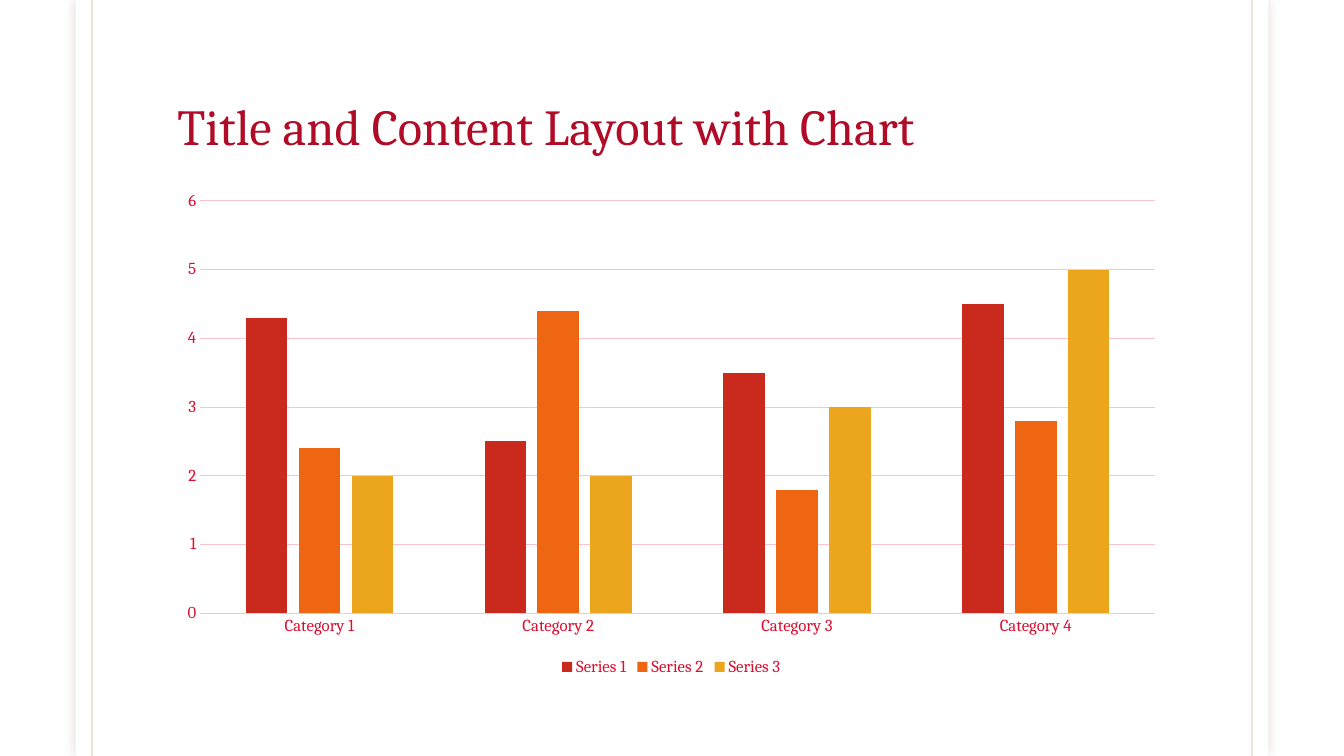
from lxml import etree
from pptx import Presentation
from pptx.chart.data import CategoryChartData
from pptx.dml.color import RGBColor
from pptx.enum.chart import XL_CHART_TYPE as Chart, XL_LEGEND_POSITION as Legend, XL_TICK_MARK as Tick
from pptx.enum.shapes import MSO_CONNECTOR as Conn, MSO_SHAPE as Shape
from pptx.enum.text import MSO_ANCHOR as Anchor, MSO_AUTO_SIZE as AutoSize, PP_ALIGN as Align
from pptx.oxml.ns import qn
from pptx.util import Pt

TITLE = "Title and Content Layout with Chart"
CATEGORIES = ["Category 1", "Category 2", "Category 3", "Category 4"]
SERIES = [
    ("Series 1", (4.3, 2.5, 3.5, 4.5), "red"),
    ("Series 2", (2.4, 4.4, 1.8, 2.8), "orange"),
    ("Series 3", (2, 2, 3, 5), "gold"),
]

COLORS = {
    "white": "FFFFFF", "title": "B10C27", "label": "DA0E30", "chart": "4D0511",
    "grid": "FBC3CC", "rule": "79540B", "shadow": "65150F",
    "red": "CA2A1E", "orange": "EE6612", "gold": "EBA61D",
}
FONT = "Cambria"
WIDTH, HEIGHT = 960, 540
PAPER_MARGIN, RULE_INSET = 54, 11.75
CONTENT_LEFT, CONTENT_WIDTH = 119.5, 720
TITLE_TOP, TITLE_HEIGHT = 25.2, 90
CHART_TOP, CHART_HEIGHT = 129.6, 356.4
OPACITY = "15000"


def rgb(name):
    return RGBColor.from_string(COLORS[name])


def set_font(font, size, color):
    font.name = FONT
    font.size = Pt(size)
    font.color.rgb = rgb(color)


def set_line(line, color, width):
    line.color.rgb = rgb(color)
    line.width = Pt(width)


def write_text(tf, text, size=12, color="label", spacing=1.0, anchor=Anchor.TOP):
    tf.word_wrap = True
    tf.auto_size = AutoSize.NONE
    tf.vertical_anchor = anchor
    p = tf.paragraphs[0]
    p.alignment = Align.LEFT
    p.line_spacing = spacing
    r = p.add_run()
    r.text = text
    set_font(r.font, size, color)


def make_translucent(clr):
    etree.SubElement(clr, qn("a:alpha")).set("val", OPACITY)


def add_paper(slide):
    sp = slide.shapes.add_shape(
        Shape.RECTANGLE, Pt(PAPER_MARGIN), 0, Pt(WIDTH - 2 * PAPER_MARGIN), Pt(HEIGHT))
    sp.shadow.inherit = False
    sp.fill.solid()
    sp.fill.fore_color.rgb = rgb("white")
    sp.line.fill.background()
    effects = sp.element.spPr.find(qn("a:effectLst"))
    glow = etree.SubElement(effects, qn("a:outerShdw"), blurRad=str(Pt(7)), dist="0",
                            dir="0", algn="ctr", rotWithShape="0")
    make_translucent(etree.SubElement(glow, qn("a:srgbClr"), val=COLORS["shadow"]))


def add_rule(slide, x):
    rule = slide.shapes.add_connector(Conn.STRAIGHT, Pt(x), 0, Pt(x), Pt(HEIGHT))
    set_line(rule.line, "rule", 1.5)
    spPr = rule.element.spPr
    make_translucent(spPr.find(".//" + qn("a:srgbClr")))
    etree.SubElement(spPr, qn("a:effectLst"))


def add_title(slide):
    title = slide.shapes.title
    title.left, title.top = Pt(CONTENT_LEFT), Pt(TITLE_TOP)
    title.width, title.height = Pt(CONTENT_WIDTH), Pt(TITLE_HEIGHT)
    write_text(title.text_frame, TITLE, size=36, color="title", spacing=0.85,
               anchor=Anchor.BOTTOM)
    title.element.getparent().append(title.element)


def add_column_chart(slide):
    data = CategoryChartData()
    data.categories = CATEGORIES
    for name, values, _ in SERIES:
        data.add_series(name, values)
    chart = slide.shapes.add_chart(
        Chart.COLUMN_CLUSTERED, Pt(CONTENT_LEFT), Pt(CHART_TOP),
        Pt(CONTENT_WIDTH), Pt(CHART_HEIGHT), data).chart
    set_font(chart.font, 10, "chart")
    chart.has_title = False
    chart.has_legend = True
    chart.legend.position = Legend.BOTTOM
    chart.legend.include_in_layout = False
    set_font(chart.legend.font, 12, "label")

    plot = chart.plots[0]
    plot.gap_width, plot.overlap = 219, -27
    plot.vary_by_categories = False
    for series, (_, _, color) in zip(plot.series, SERIES):
        series.format.fill.solid()
        series.format.fill.fore_color.rgb = rgb(color)
        series.format.line.fill.background()

    for axis in (chart.category_axis, chart.value_axis):
        axis.major_tick_mark = axis.minor_tick_mark = Tick.NONE
        set_font(axis.tick_labels.font, 12, "label")
    set_line(chart.category_axis.format.line, "grid", 0.75)
    value_axis = chart.value_axis
    value_axis.minimum_scale, value_axis.maximum_scale, value_axis.major_unit = 0, 6, 1
    value_axis.format.line.fill.background()
    set_line(value_axis.major_gridlines.format.line, "grid", 0.75)


def main():
    prs = Presentation()
    prs.slide_width, prs.slide_height = Pt(WIDTH), Pt(HEIGHT)
    slide = prs.slides.add_slide(prs.slide_layouts[5])
    slide.background.fill.solid()
    slide.background.fill.fore_color.rgb = rgb("white")
    add_paper(slide)
    rule_x = PAPER_MARGIN + RULE_INSET
    for x in (rule_x, WIDTH - rule_x):
        add_rule(slide, x)
    add_title(slide)
    add_column_chart(slide)
    prs.save("out.pptx")


if __name__ == "__main__":
    main()
